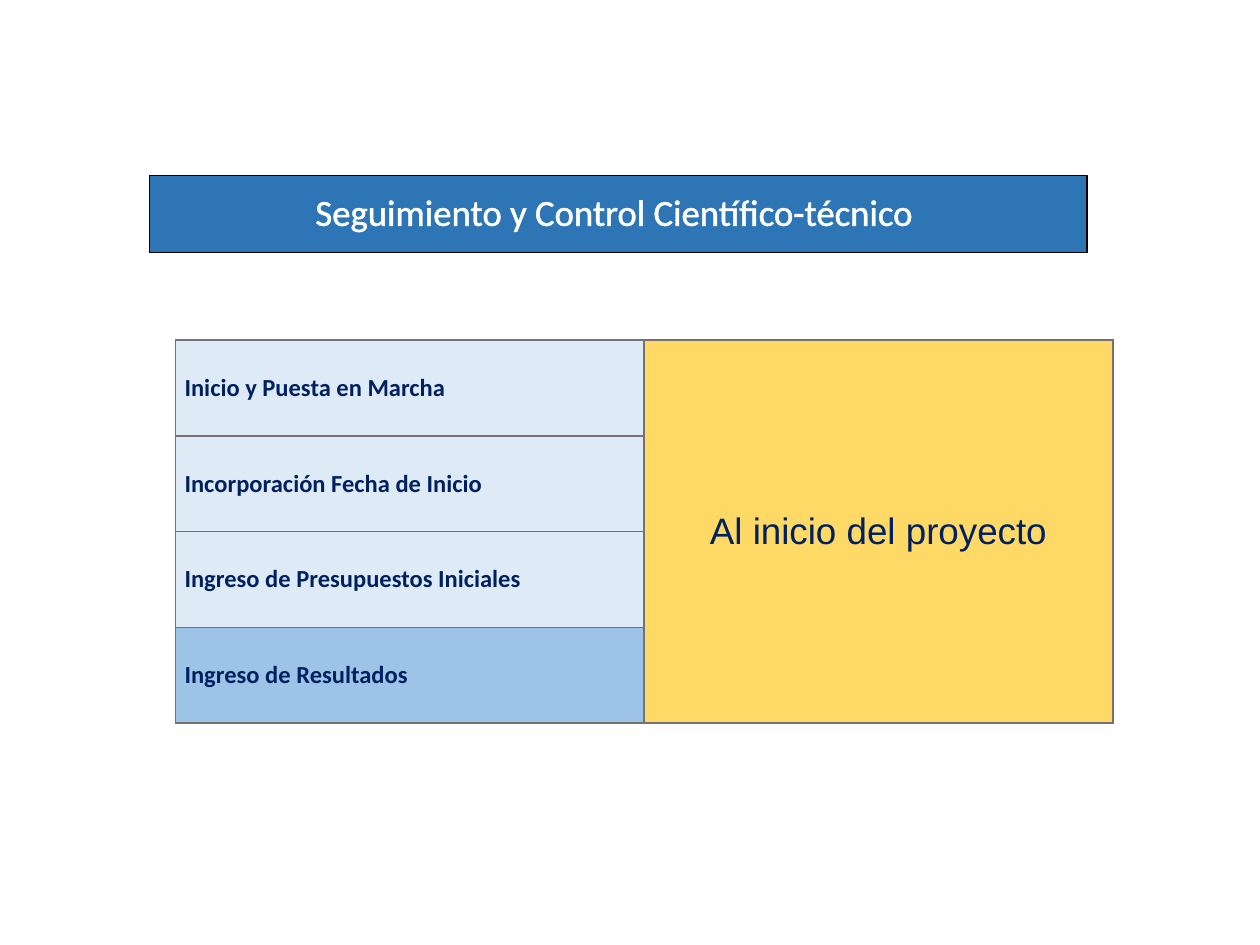
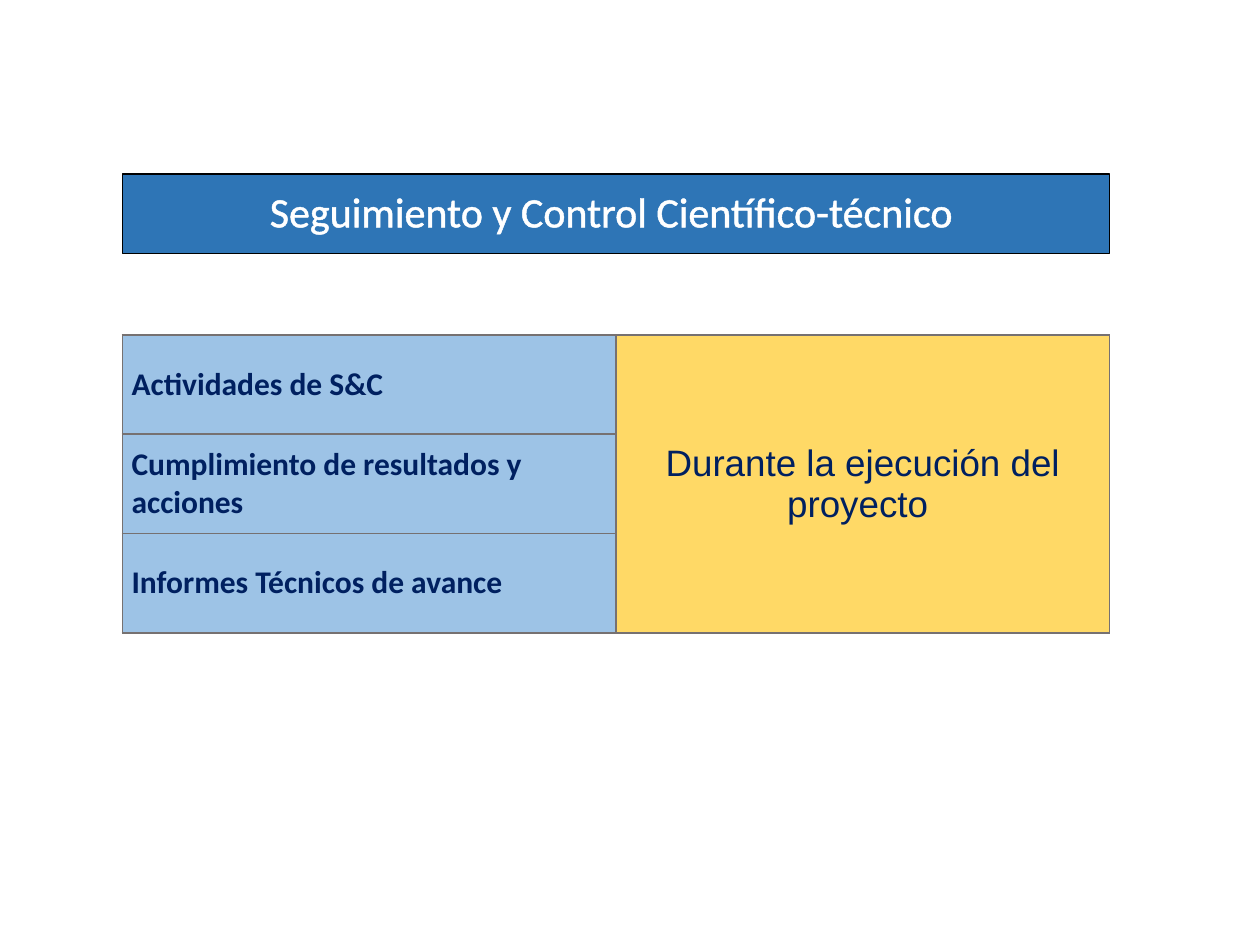
from collections import namedtuple
from dataclasses import dataclass

from lxml import etree
from pptx import Presentation
from pptx.dml.color import RGBColor
from pptx.enum.shapes import MSO_SHAPE
from pptx.enum.text import MSO_ANCHOR, PP_ALIGN
from pptx.oxml.ns import qn
from pptx.util import Pt

RECTANGLE = MSO_SHAPE.RECTANGLE
MIDDLE = MSO_ANCHOR.MIDDLE
LEFT, CENTER = PP_ALIGN.LEFT, PP_ALIGN.CENTER

Box = namedtuple("Box", "left top width height")


@dataclass(frozen=True)
class Theme:
    banner: str = "2E75B6"
    banner_line: str = "000000"
    banner_text: str = "FFFFFF"
    text: str = "002060"
    pale_blue: str = "DEEBF7"
    mid_blue: str = "9DC3E6"
    stage: str = "FFD966"
    border: str = "767171"
    label_font: str = "Calibri"
    stage_font: str = "Arial"
    stage_size: float = 21
    thin_line: float = 0.75
    border_width: float = 1
    side_margin: float = 5.2
    end_margin: float = 2.6


THEME = Theme()
TITLE = "Seguimiento y Control Científico-técnico "


def place(box):
    return [Pt(length) for length in box]


def paint(target, color):
    target.fill.solid()
    target.fill.fore_color.rgb = RGBColor.from_string(color)


def set_margins(target):
    target.margin_left = target.margin_right = Pt(THEME.side_margin)
    target.margin_top = target.margin_bottom = Pt(THEME.end_margin)


def write(frame, text, font, size, color, align, bold=False):
    """Fill a text frame with one styled paragraph and return its run."""
    frame.text = text
    para = frame.paragraphs[0]
    para.alignment = align
    span = para.runs[0]
    span.font.name = font
    span.font.size = Pt(size)
    span.font.bold = bold
    span.font.color.rgb = RGBColor.from_string(color)
    return span


def insert_line(parent, index, tag, color, width):
    """Insert a solid line element, used for text outlines and cell borders."""
    line = etree.Element(qn(tag), w=str(Pt(width)))
    fill = etree.SubElement(line, qn("a:solidFill"))
    etree.SubElement(fill, qn("a:srgbClr"), val=color)
    parent.insert(index, line)


def add_banner(page, box, size):
    banner = page.shapes.add_shape(RECTANGLE, *place(box))
    banner.shadow.inherit = False
    paint(banner, THEME.banner)
    banner.line.color.rgb = RGBColor.from_string(THEME.banner_line)
    banner.line.width = Pt(THEME.thin_line)

    frame = banner.text_frame
    frame.word_wrap = True
    frame.vertical_anchor = MIDDLE
    set_margins(frame)
    span = write(frame, TITLE, THEME.label_font, size, THEME.banner_text, CENTER)
    frame.paragraphs[0].line_spacing = 0.9
    insert_line(span.font._element, 0, "a:ln", THEME.banner_text, THEME.thin_line)


def style_cell(cell, fill):
    paint(cell, fill)
    cell.vertical_anchor = MIDDLE
    set_margins(cell)
    properties = cell._tc.get_or_add_tcPr()
    for index, side in enumerate(("a:lnL", "a:lnR", "a:lnT", "a:lnB")):
        insert_line(properties, index, side, THEME.border, THEME.border_width)


def add_stage_table(page, box, tasks, stage, task_size):
    """List (task, fill) rows on the left beside one merged stage cell."""
    table = page.shapes.add_table(len(tasks), 2, *place(box)).table
    table.first_row = table.horz_banding = False
    for column in table.columns:
        column.width = Pt(box.width / 2)

    for index, (task, fill) in enumerate(tasks):
        table.rows[index].height = Pt(box.height / len(tasks))
        task_cell, stage_cell = table.cell(index, 0), table.cell(index, 1)
        style_cell(task_cell, fill)
        style_cell(stage_cell, THEME.stage)
        write(task_cell.text_frame, task, THEME.label_font, task_size,
              THEME.text, LEFT, bold=True)

    stage_cell = table.cell(0, 1)
    stage_cell.merge(table.cell(len(tasks) - 1, 1))
    write(stage_cell.text_frame, stage, THEME.stage_font, THEME.stage_size,
          THEME.text, CENTER)


def add_stage_page(deck, banner_box, title_size, table_box, tasks, stage, task_size):
    page = deck.slides.add_slide(deck.slide_layouts[6])
    add_banner(page, banner_box, title_size)
    add_stage_table(page, table_box, tasks, stage, task_size)


def main():
    deck = Presentation()
    deck.slide_width, deck.slide_height = Pt(720), Pt(540)

    # Project start
    add_stage_page(
        deck, Box(85.5, 100.3, 535.6, 44), 21, Box(100.3, 194.4, 535.6, 218.8),
        [("Inicio y Puesta en Marcha", THEME.pale_blue),
         ("Incorporación Fecha de Inicio", THEME.pale_blue),
         ("Ingreso de Presupuestos Iniciales", THEME.pale_blue),
         ("Ingreso de Resultados", THEME.mid_blue)],
        "Al inicio del proyecto", 14)

    # Project execution
    add_stage_page(
        deck, Box(70, 99.5, 564, 45.4), 24, Box(70, 191.3, 564, 170.4),
        [("Actividades de S&C", THEME.mid_blue),
         ("Cumplimiento de resultados y acciones", THEME.mid_blue),
         ("Informes Técnicos de avance", THEME.mid_blue)],
        "Durante la ejecución del proyecto ", 18)

    deck.save("out.pptx")


if __name__ == "__main__":
    main()
